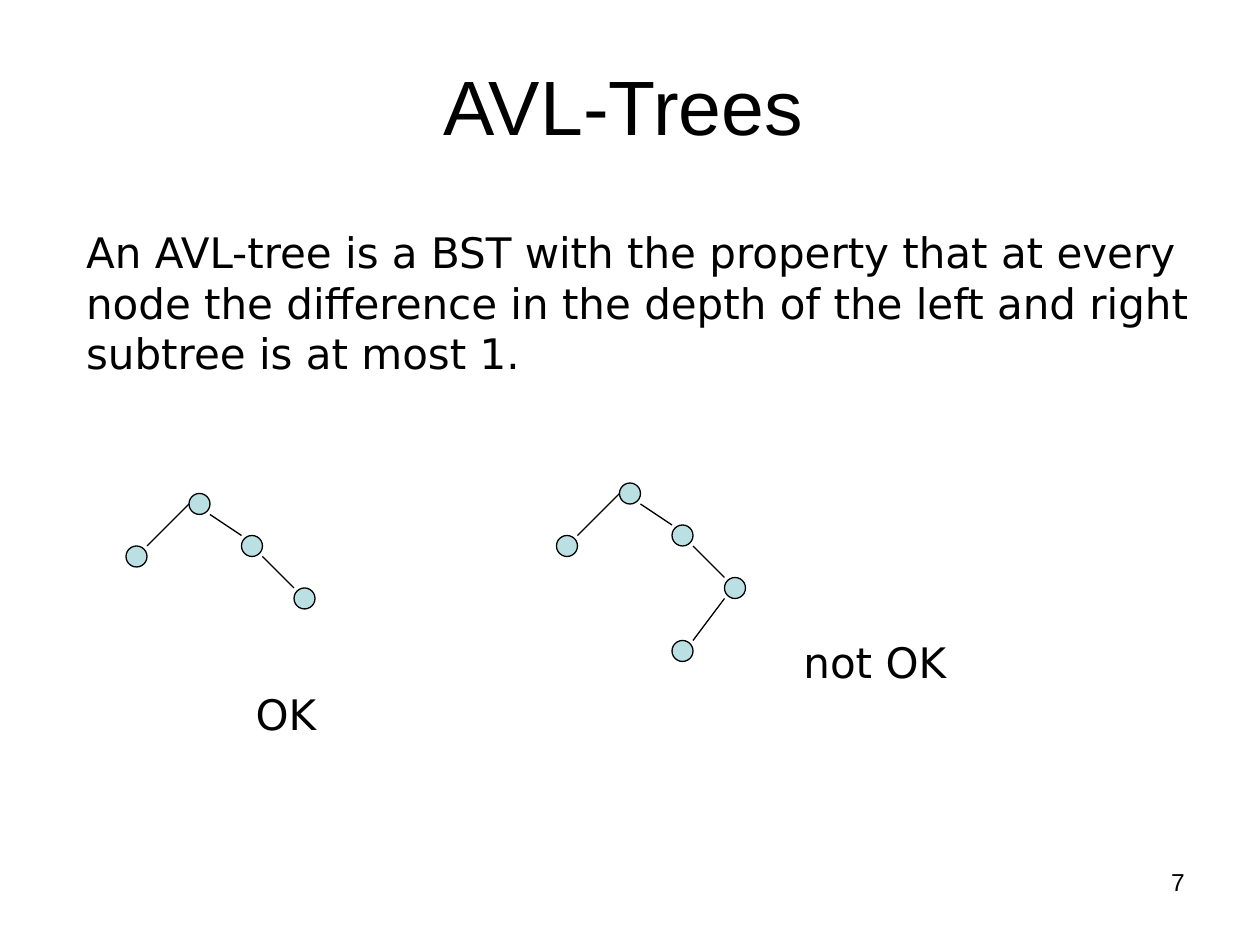
from lxml.etree import SubElement
from pptx import Presentation
from pptx.dml.color import RGBColor
from pptx.enum.shapes import MSO_CONNECTOR as Connector, MSO_SHAPE as Shape
from pptx.enum.text import MSO_ANCHOR as Anchor, MSO_AUTO_SIZE as Fit, PP_ALIGN as Align
from pptx.oxml.ns import qn
from pptx.util import Inches, Pt

BLACK = RGBColor(0x00, 0x00, 0x00)
PALE_TEAL = RGBColor(0xBB, 0xE0, 0xE3)

deck = Presentation()
deck.slide_width, deck.slide_height = Inches(10), Inches(7.5)
UNIT = deck.slide_width // 120
NODE = 2 * UNIT
slide = deck.slides.add_slide(deck.slide_layouts[1])


def place(box, columns, rows, wide, high):
    box.left, box.top = int(columns * UNIT), int(rows * UNIT)
    box.width, box.height = int(wide * UNIT), int(high * UNIT)


def write(box, words, size, face, align, **frame_format):
    frame = box.text_frame
    frame.text = words
    for name, value in frame_format.items():
        setattr(frame, name, value)
    line = frame.paragraphs[0]
    line.alignment = align
    for name, value in {"size": Pt(size), "name": face}.items():
        setattr(line.font, name, value)
    line.font.color.rgb = BLACK
    return line


heading = slide.shapes.title
place(heading, 5, 6, 108.7, 9)
write(heading, "AVL-Trees", 44, "Arial", Align.CENTER,
      vertical_anchor=Anchor.BOTTOM, auto_size=Fit.NONE, word_wrap=True)

definition = slide.placeholders[1]
place(definition, 7, 21, 108, 15.6)
sentence = write(
    definition,
    "An AVL-tree is a BST with the property that at every node the difference "
    "in the depth of the left and right subtree is at most 1.",
    24, "DejaVu Sans", Align.LEFT,
    vertical_anchor=Anchor.TOP, auto_size=Fit.NONE, word_wrap=True)
sentence.space_before = Pt(2)
indents = sentence._p.get_or_add_pPr()
for name in ("marL", "indent"):
    indents.set(name, "0")
SubElement(indents, qn("a:buNone"))

balanced_nodes = [(0, 0), (5, 4), (10, 9), (-6, 5)]
balanced_edges = [((0, 1), (-4, 5)), ((2, 2), (5, 4)), ((7, 6), (10, 9))]
extra_node = (5, 15)
extra_edge = ((10, 11), (7, 15))

trees = [
    (slide.shapes.add_group_shape().shapes, 18, 47, balanced_nodes, balanced_edges),
    (slide.shapes, 59, 46, balanced_nodes + [extra_node], balanced_edges + [extra_edge]),
]
for canvas, root_column, root_row, nodes, edges in trees:
    for across, down in nodes:
        node = canvas.add_shape(Shape.OVAL, (root_column + across) * UNIT,
                                (root_row + down) * UNIT, NODE, NODE)
        node.shadow.inherit = False
        node.fill.solid()
        node.fill.fore_color.rgb = PALE_TEAL
        node.line.color.rgb = BLACK
        node.line.width = Pt(0.75)
    for (x1, y1), (x2, y2) in edges:
        edge = canvas.add_connector(
            Connector.STRAIGHT, (root_column + x1) * UNIT, (root_row + y1) * UNIT,
            (root_column + x2) * UNIT, (root_row + y2) * UNIT)
        edge.line.color.rgb = BLACK
        edge.line.width = Pt(0.75)
        SubElement(edge._element.spPr, qn("a:effectLst"))

for words, size, face, wrap, *area in [
    ("OK", 24, "DejaVu Sans", False, 23, 65, 8.3, 6),
    ("not OK", 24, "DejaVu Sans", False, 75, 60, 16.3, 6),
    ("7", 14, "Arial", True, 86, 82, 28, 6.25),
]:
    caption = slide.shapes.add_textbox(0, 0, 0, 0)
    place(caption, *area)
    write(caption, words, size, face, Align.RIGHT, word_wrap=wrap)

deck.save("out.pptx")
